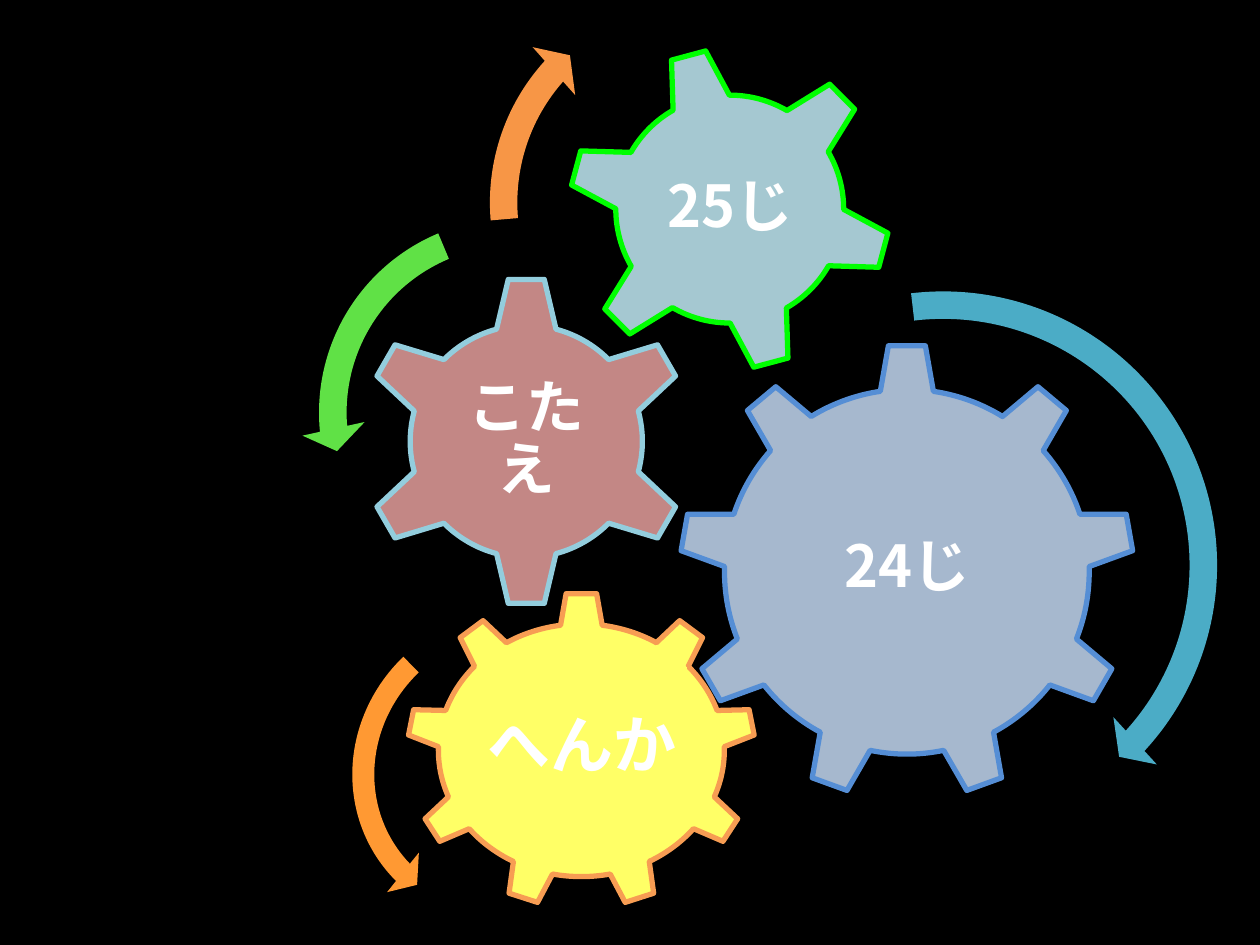
"""Build a slide of four interlocking labelled gears with curved rotation arrows."""
from lxml.etree import SubElement
from pptx import Presentation
from pptx.dml.color import RGBColor
from pptx.enum.shapes import MSO_SHAPE as SHAPE
from pptx.enum.text import MSO_ANCHOR as ANCHOR, PP_ALIGN as ALIGN
from pptx.oxml.ns import qn
from pptx.util import Pt

FONT = "Noto Sans CJK KR"
BLACK = RGBColor(0x00, 0x00, 0x00)
WHITE = RGBColor(0xFF, 0xFF, 0xFF)
PALE_BLUE = RGBColor(0xB9, 0xCD, 0xE5)
BLUE = RGBColor(0x55, 0x8E, 0xD5)
ROSE = RGBColor(0xD9, 0x96, 0x94)
SKY = RGBColor(0x93, 0xCD, 0xDD)
PALE_TEAL = RGBColor(0xB7, 0xDE, 0xE8)
LIME = RGBColor(0x00, 0xFF, 0x00)
TEAL = RGBColor(0x4B, 0xAC, 0xC6)
GREEN = RGBColor(0x60, 0xE1, 0x46)
ORANGE = RGBColor(0xF7, 0x96, 0x46)
YELLOW = RGBColor(0xFF, 0xFF, 0x66)
APRICOT = RGBColor(0xF7, 0x9D, 0x53)
AMBER = RGBColor(0xFF, 0x99, 0x33)

UPPER_GEARS = [
    dict(kind=SHAPE.GEAR_9, box=(388, 196.5, 260.5, 260.5), fill=PALE_BLUE, line=BLUE,
         text="24じ", text_box=(440.5, 258, 156, 134)),
    dict(kind=SHAPE.GEAR_6, box=(206, 157.5, 189.5, 189.5), fill=ROSE, line=SKY,
         text="こたえ", text_box=(253.5, 205, 94.5, 93.5)),
    dict(kind=SHAPE.GEAR_6, box=(324, 26.5, 186, 186), fill=PALE_TEAL, line=LIME, rotation=345,
         text="25じ", text_box=(365, 67, 104.5, 104.5)),
]
UPPER_ARROWS = [
    dict(kind=SHAPE.CIRCULAR_ARROW, box=(372, 156, 334, 334), fill=TEAL,
         adjust=(0.047, 2.99, 25.475, 157.953, 0.055)),
    dict(kind=SHAPE.LEFT_CIRCULAR_ARROW, box=(172, 114.5, 242.5, 242.5), fill=GREEN,
         adjust=(0.065, 4.3, 104.891, 148.378, 0.075)),
    dict(kind=SHAPE.CIRCULAR_ARROW, box=(269.5, -15, 261.5, 261.5), fill=ORANGE,
         adjust=(0.06, 3.941, 133.138, 105.082, 0.07)),
]
LOWER_GEAR = dict(kind=SHAPE.GEAR_9, box=(232.5, 338.5, 199.5, 180.5), fill=YELLOW, line=APRICOT)
LOWER_LABEL = dict(kind=SHAPE.RECTANGLE, box=(273, 381, 119.5, 93), fill=YELLOW)
LOWER_ARROW = dict(kind=SHAPE.LEFT_CIRCULAR_ARROW, box=(191.5, 342, 201.5, 193), fill=AMBER,
                   rotation=321.1, adjust=(0.065, 4.3, 104.891, 158.756, 0.075))


def write(sp, text, size=33, inset=3.6, color=WHITE):
    tf = sp.text_frame
    tf.word_wrap = True
    tf.vertical_anchor = ANCHOR.MIDDLE
    tf.margin_left = tf.margin_right = tf.margin_top = tf.margin_bottom = Pt(inset)
    p = tf.paragraphs[0]
    p.alignment = ALIGN.CENTER
    p.line_spacing = 0.9
    r = p.add_run()
    r.text = text
    r.font.size = Pt(size)
    r.font.bold = True
    r.font.color.rgb = color
    r.font.name = FONT
    SubElement(r.font._element, qn("a:ea"), typeface=FONT)


def add_shape(shapes, kind, box, fill, line=None, rotation=0, adjust=(), opacity=100):
    sp = shapes.add_shape(kind, *map(Pt, box))
    sp.shadow.inherit = False
    sp.rotation = rotation
    sp.fill.solid()
    sp.fill.fore_color.rgb = fill
    if opacity < 100:
        color = sp._element.spPr.find(qn("a:solidFill"))[0]
        SubElement(color, qn("a:alpha"), val=str(opacity * 1000))
    if line is None:
        sp.line.fill.background()
    else:
        sp.line.color.rgb = line
        sp.line.width = Pt(3)
    for i, value in enumerate(adjust):
        sp.adjustments[i] = value
    return sp


def add_gear(shapes, text, text_box, **style):
    add_shape(shapes, opacity=90, **style)
    write(shapes.add_textbox(*map(Pt, text_box)), text)


def main():
    prs = Presentation()
    prs.slide_width, prs.slide_height = Pt(720), Pt(540)
    s = prs.slides.add_slide(prs.slide_layouts[6])
    s.background.fill.solid()
    s.background.fill.fore_color.rgb = BLACK

    upper = s.shapes.add_group_shape().shapes
    for gear in UPPER_GEARS:
        add_gear(upper, **gear)
    for arrow in UPPER_ARROWS:
        add_shape(upper, **arrow)

    lower = s.shapes.add_group_shape().shapes
    add_shape(lower, **LOWER_GEAR)
    write(add_shape(lower, **LOWER_LABEL), "へんか", size=36, inset=4.3)
    add_shape(s.shapes, **LOWER_ARROW)
    prs.save("out.pptx")


if __name__ == "__main__":
    main()
